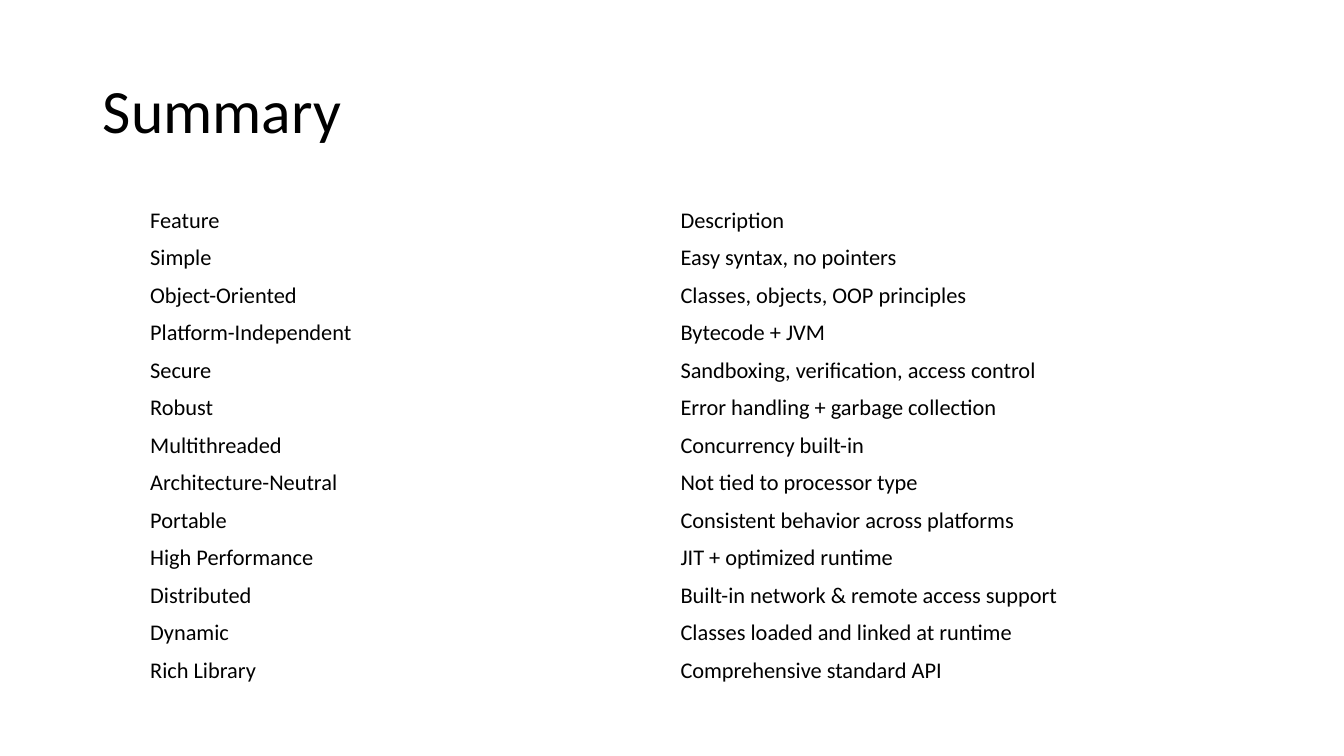
from pptx import Presentation
from pptx.dml.color import RGBColor
from pptx.enum.text import MSO_ANCHOR, PP_ALIGN
from pptx.util import Inches, Pt

TITLE = "Summary"
FEATURES = [
    ("Feature", "Description"),
    ("Simple", "Easy syntax, no pointers"),
    ("Object-Oriented", "Classes, objects, OOP principles"),
    ("Platform-Independent", "Bytecode + JVM"),
    ("Secure", "Sandboxing, verification, access control"),
    ("Robust", "Error handling + garbage collection"),
    ("Multithreaded", "Concurrency built-in"),
    ("Architecture-Neutral", "Not tied to processor type"),
    ("Portable", "Consistent behavior across platforms"),
    ("High Performance", "JIT + optimized runtime"),
    ("Distributed", "Built-in network & remote access support"),
    ("Dynamic", "Classes loaded and linked at runtime"),
    ("Rich Library", "Comprehensive standard API"),
]
THEME = {
    "font": "Calibri",
    "ink": RGBColor(0x00, 0x00, 0x00),
    "paper": RGBColor(0xFF, 0xFF, 0xFF),
    "title_size": Pt(44),
    "table_size": Pt(16),
}
TITLE_BOX = {"left": 0.92, "top": 0.4, "width": 11.5, "height": 1.45}
TABLE_BOX = {"left": 1.4, "top": 2, "width": 10.52, "height": 4.76}
CELL_FORMAT = {
    "vertical_anchor": MSO_ANCHOR.MIDDLE,
    "margin_left": Inches(0.09),
    "margin_right": Inches(0.09),
    "margin_top": Inches(0.05),
    "margin_bottom": Inches(0.05),
}


def write(para, text, size):
    span = para.add_run()
    span.text = text
    font_format = {"name": THEME["font"], "size": size, "bold": False}
    for name, value in font_format.items():
        setattr(span.font, name, value)
    span.font.color.rgb = THEME["ink"]


def add_title(page):
    title = page.shapes.title
    for name, value in TITLE_BOX.items():
        setattr(title, name, Inches(value))
    title.text_frame.vertical_anchor = MSO_ANCHOR.MIDDLE
    para = title.text_frame.paragraphs[0]
    para.alignment = PP_ALIGN.LEFT
    para.line_spacing = 0.9
    write(para, TITLE, THEME["title_size"])


def add_feature_table(page):
    box = {name: Inches(value) for name, value in TABLE_BOX.items()}
    table = page.shapes.add_table(len(FEATURES), len(FEATURES[0]), **box).table
    table.first_row = False
    table.horz_banding = False
    for row, texts in zip(table.rows, FEATURES):
        for cell, text in zip(row.cells, texts):
            cell.fill.background()
            for name, value in CELL_FORMAT.items():
                setattr(cell, name, value)
            write(cell.text_frame.paragraphs[0], text, THEME["table_size"])


def main():
    deck = Presentation()
    deck.slide_width = Inches(13.33)
    deck.slide_height = Inches(7.5)
    title_only = deck.slide_layouts[5]
    page = deck.slides.add_slide(title_only)
    page.background.fill.solid()
    page.background.fill.fore_color.rgb = THEME["paper"]
    add_title(page)
    add_feature_table(page)
    deck.save("out.pptx")


if __name__ == "__main__":
    main()
